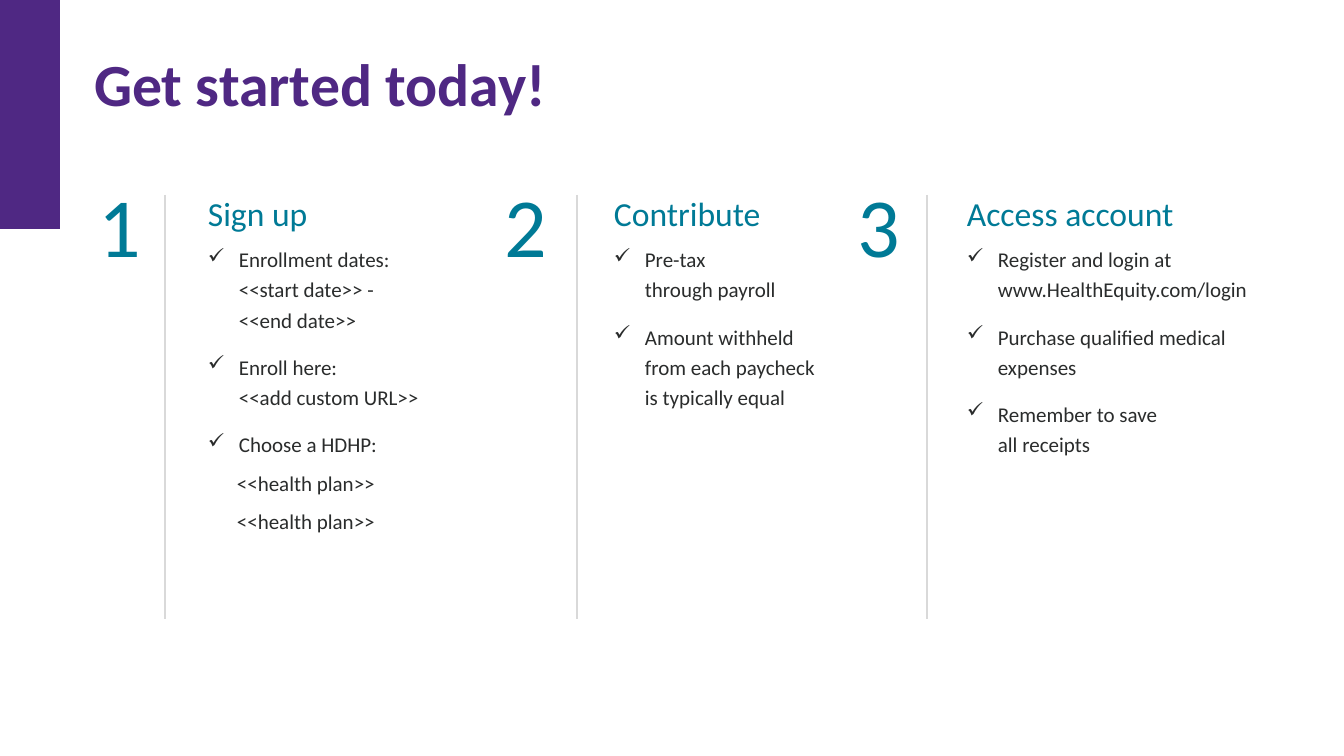
from lxml import etree
from pptx import Presentation
from pptx.dml.color import RGBColor
from pptx.enum.shapes import MSO_CONNECTOR, MSO_SHAPE
from pptx.enum.text import MSO_ANCHOR, MSO_AUTO_SIZE, PP_ALIGN
from pptx.oxml.ns import qn
from pptx.util import Emu, Pt

LEFT, CENTER = PP_ALIGN.LEFT, PP_ALIGN.CENTER
TOP, NO_FIT = MSO_ANCHOR.TOP, MSO_AUTO_SIZE.NONE
RECTANGLE, STRAIGHT = MSO_SHAPE.RECTANGLE, MSO_CONNECTOR.STRAIGHT

PURPLE = RGBColor(0x4F, 0x28, 0x83)
TEAL = RGBColor(0x00, 0x7A, 0x96)
INK = RGBColor(0x2A, 0x2C, 0x2C)
GRAY = RGBColor(0xD9, 0xD9, 0xD9)

TITLE = "Get started today!"
# Each item: style name, text (\v breaks the line)
STEPS = [
    {"heading": "Sign up", "left": 198, "width": 264, "rule": 165, "items": [
        ("check", "Enrollment dates: <<start date>> -\v<<end date>>"),
        ("check", "Enroll here:\v<<add custom URL>>"),
        ("check_tight", "Choose a HDHP:"),
        ("plan", "<<health plan>>"),
        ("plan", "<<health plan>>")]},
    {"heading": "Contribute", "left": 604, "width": 228, "rule": 577, "items": [
        ("check", "Pre-tax\vthrough payroll"),
        ("check", "Amount withheld from each paycheck is typically equal")]},
    {"heading": "Access account", "left": 957, "width": 359, "rule": 927, "items": [
        ("check", "Register and login at www.HealthEquity.com/login"),
        ("check", "Purchase qualified medical expenses"),
        ("check", "Remember to save\vall receipts")]},
]

TITLE_FONT = {"name": "Calibri", "size": Pt(42.7), "bold": True}
NUMBER_FONT = {"name": "Calibri", "size": Pt(60)}
HEADING_FONT = {"name": "Calibri", "size": Pt(24)}
BODY_FONT = {"name": "Calibri", "size": Pt(15)}

HEADING_SPACING = {"line_spacing": 1.1, "space_after": Pt(6)}
# Style: space after in points, left indent in px, has a check mark
ITEM_STYLES = {
    "check": (12, 31, True),
    "check_tight": (6, 31, True),
    "plan": (6, 29, False),
}

NUMBER_OFFSET, NUMBER_TOP, NUMBER_WIDTH, NUMBER_HEIGHT = 127, 169, 98, 37
BODY_TOP, BODY_HEIGHT = 184, 355
RULE_TOP, RULE_BOTTOM = 195, 619


def px(length):
    return Emu(round(length * 914400 / 100.8))


def set_all(target, values):
    for name, value in values.items():
        setattr(target, name, value)


def write(para, text, font, color, **spacing):
    para.text = text
    set_all(para, spacing)
    for span in para.runs:
        set_all(span.font, font)
        span.font.color.rgb = color


def indent(para, left, checked):
    """Set the left indent, with a hanging check mark if wanted."""
    properties = para._p.get_or_add_pPr()
    properties.set("marL", str(px(left)))
    properties.set("indent", str(-px(left) if checked else 0))
    if checked:
        etree.SubElement(properties, qn("a:buChar")).set("char", "✓")


def add_text_box(page, left, top, width, height):
    box = page.shapes.add_textbox(px(left), px(top), px(width), px(height))
    box.text_frame.word_wrap = True
    return box.text_frame


def add_title(page):
    title = page.shapes.title
    set_all(title, {"left": px(94), "top": px(40), "width": px(1194), "height": px(75)})
    frame = title.text_frame
    set_all(frame, {"margin_left": 0, "margin_top": 0, "margin_right": 0,
                    "margin_bottom": 0, "vertical_anchor": TOP, "auto_size": NO_FIT})
    write(frame.paragraphs[0], TITLE, TITLE_FONT, PURPLE, alignment=LEFT, line_spacing=1.1)


def add_corner_bar(page):
    bar = page.shapes.add_shape(RECTANGLE, 0, 0, px(60), px(229))
    bar.shadow.inherit = False
    bar.fill.solid()
    bar.fill.fore_color.rgb = PURPLE
    bar.line.fill.background()


def add_rule(page, x):
    rule = page.shapes.add_connector(STRAIGHT, px(x), px(RULE_TOP), px(x), px(RULE_BOTTOM))
    rule.line.color.rgb = GRAY
    rule.line.width = Pt(2)
    etree.SubElement(rule._element.spPr, qn("a:effectLst"))


def add_step(page, number, step):
    frame = add_text_box(page, step["left"] - NUMBER_OFFSET, NUMBER_TOP,
                         NUMBER_WIDTH, NUMBER_HEIGHT)
    write(frame.paragraphs[0], str(number), NUMBER_FONT, TEAL, alignment=CENTER)

    frame = add_text_box(page, step["left"], BODY_TOP, step["width"], BODY_HEIGHT)
    write(frame.paragraphs[0], step["heading"], HEADING_FONT, TEAL, **HEADING_SPACING)
    for style, text in step["items"]:
        after, left, checked = ITEM_STYLES[style]
        para = frame.add_paragraph()
        indent(para, left, checked)
        write(para, text, BODY_FONT, INK, line_spacing=1.2, space_after=Pt(after))

    add_rule(page, step["rule"])


def main():
    deck = Presentation()
    deck.slide_width, deck.slide_height = px(1344), px(756)
    page = deck.slides.add_slide(deck.slide_layouts[5])
    add_corner_bar(page)
    add_title(page)
    for number, step in enumerate(STEPS, 1):
        add_step(page, number, step)
    deck.save("out.pptx")


if __name__ == "__main__":
    main()
